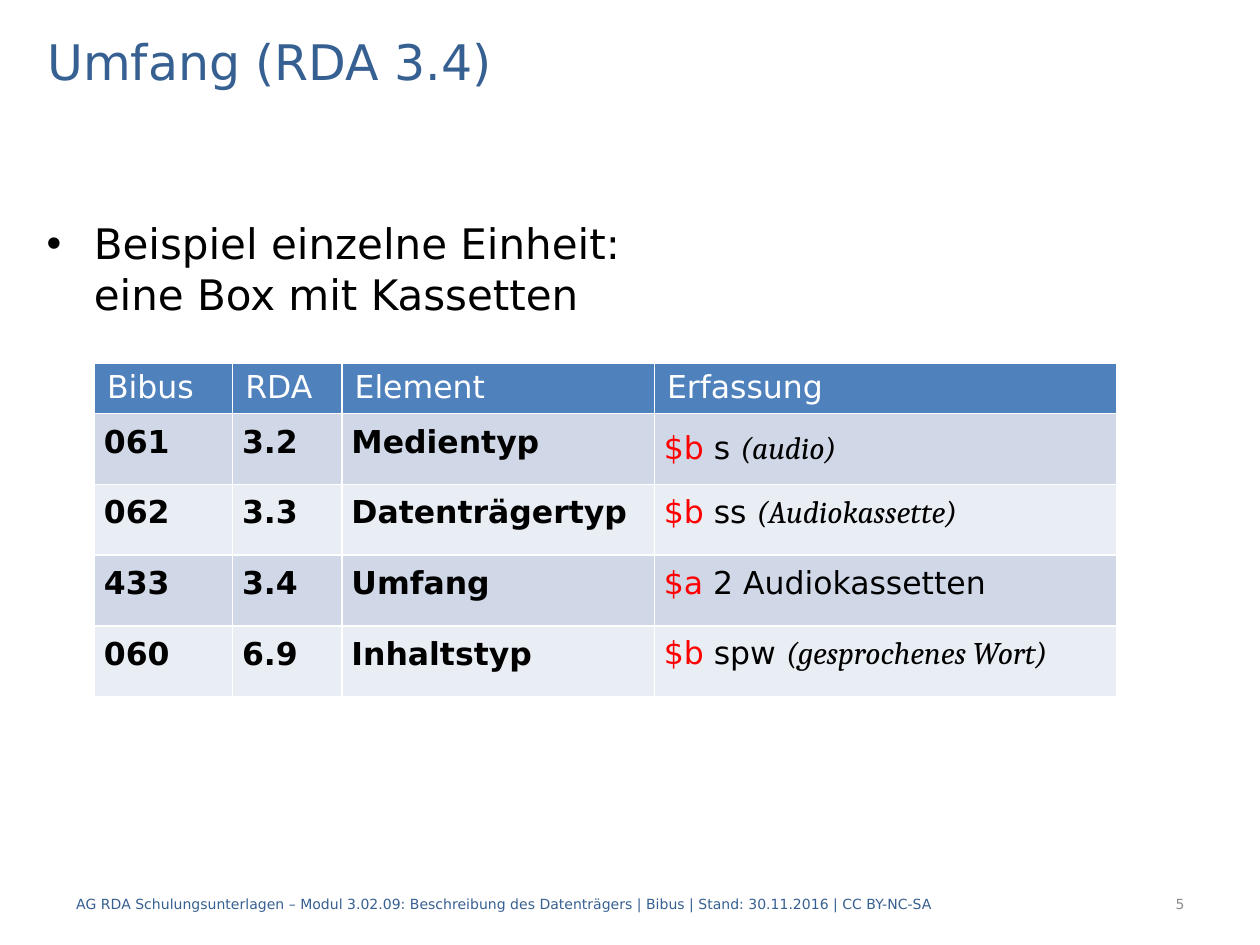
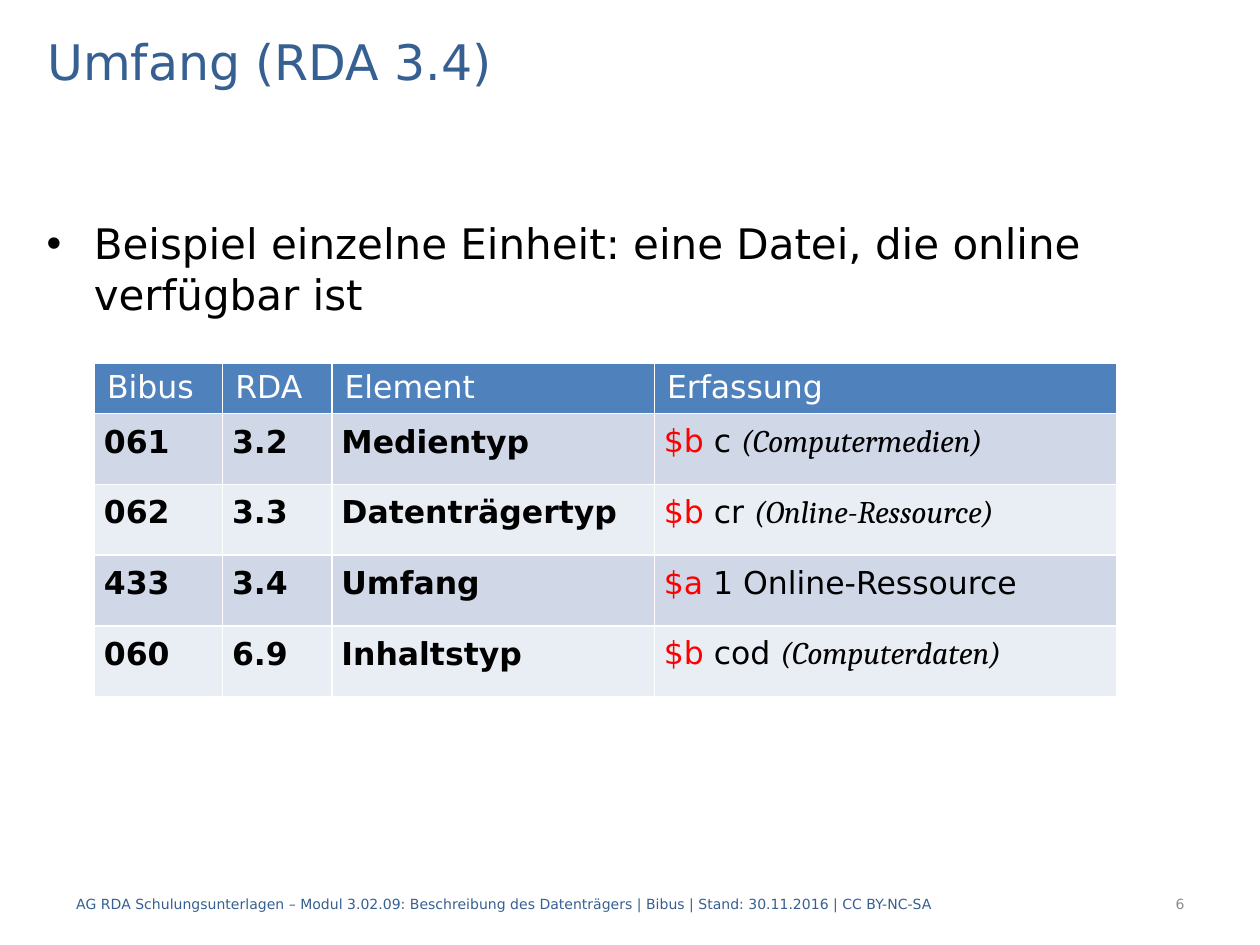
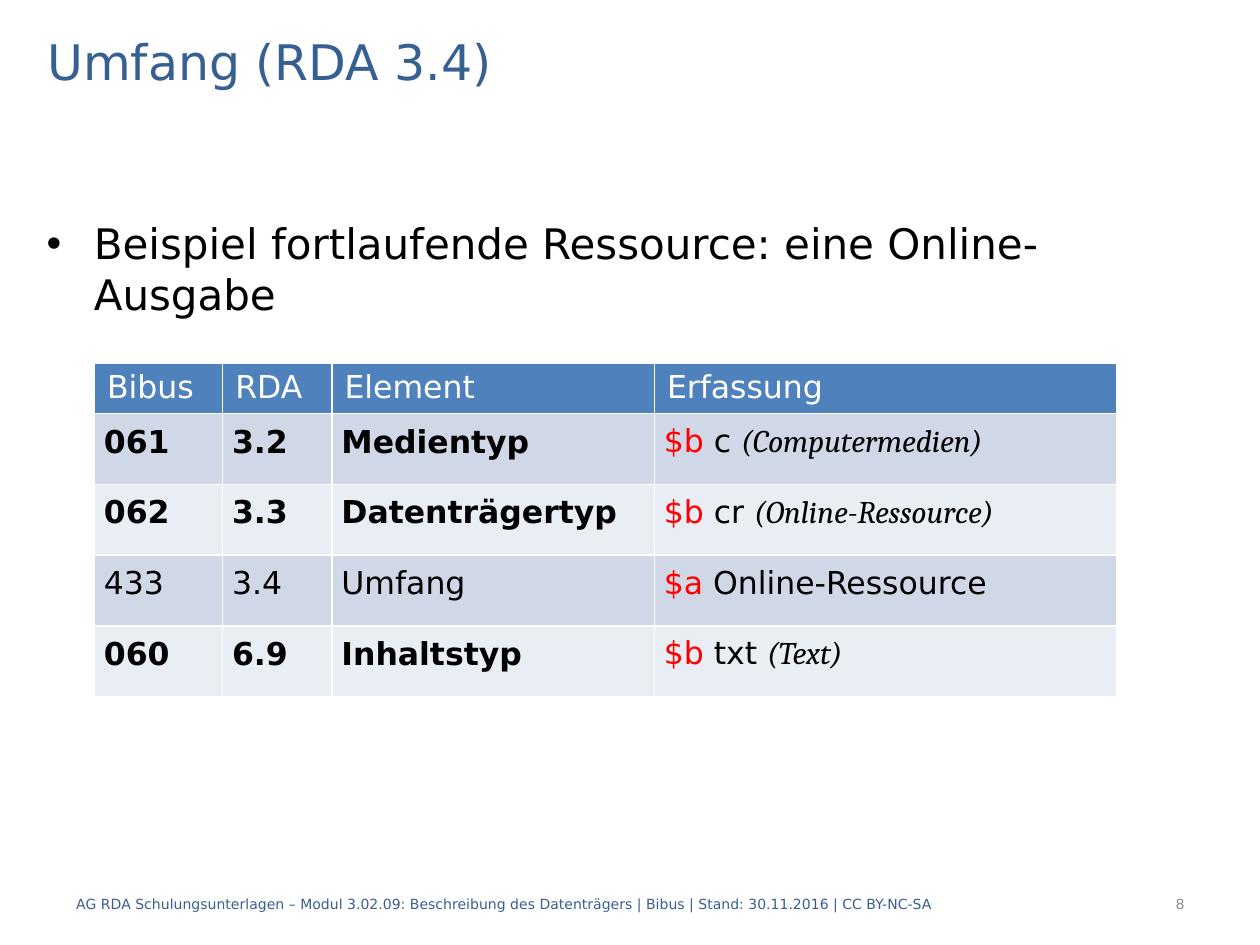
from lxml import etree
from pptx import Presentation
from pptx.dml.color import RGBColor
from pptx.enum.text import MSO_ANCHOR, PP_ALIGN
from pptx.oxml.ns import qn
from pptx.util import Pt

TOP, MIDDLE = MSO_ANCHOR.TOP, MSO_ANCHOR.MIDDLE
LEFT, RIGHT = PP_ALIGN.LEFT, PP_ALIGN.RIGHT

SANS, SERIF = "DejaVu Sans", "Cambria"
COLORS = {
    "title": "376092",
    "text": "000000",
    "code": "FF0000",
    "number": "8C8C8C",
    "header": "4F81BD",
    "odd": "D0D8E8",
    "even": "E9EDF4",
    "white": "FFFFFF",
}

TITLE_BOX = (20, 14.5, 680.5, 40.5)
BODY_BOX = (19.5, 66, 680.5, 430.5)
TABLE_BOX = (54, 207.5, 584, 190.2)
FOOTER_BOX = (36.5, 502, 647.5, 28.5)
HEADER_HEIGHT = 28.2
NUMBER_WIDTH = 114.5

TITLE = "Umfang (RDA 3.4)"
FOOTER = ("AG RDA Schulungsunterlagen – Modul 3.02.09: Beschreibung des "
          "Datenträgers | Bibus | Stand: 30.11.2016 | CC BY-NC-SA")
HEADINGS = ("Bibus", "RDA", "Element", "Erfassung")
FIELDS = (
    ("061", "3.2", "Medientyp"),
    ("062", "3.3", "Datenträgertyp"),
    ("433", "3.4", "Umfang"),
    ("060", "6.9", "Inhaltstyp"),
)
WIDE_FIRST = (79, 62.5, 178.5, 264)
NARROW_FIRST = (73.25, 62.5, 184.25, 264)

SLIDES = (
    {
        "number": "5",
        "example": "Beispiel einzelne Einheit: \neine Box mit Kassetten",
        "widths": WIDE_FIRST,
        "entries": (("$b", " s ", "(audio)"),
                    ("$b", " ss ", "(Audiokassette)"),
                    ("$a", " 2 Audiokassetten", ""),
                    ("$b", " spw ", "(gesprochenes Wort)")),
        "natural_spacing": ("061",),
    },
    {
        "number": "6",
        "example": "Beispiel einzelne Einheit: eine Datei, die online verfügbar ist",
        "widths": NARROW_FIRST,
        "entries": (("$b", " c ", "(Computermedien)"),
                    ("$b", " cr ", "(Online-Ressource)"),
                    ("$a", " 1 Online-Ressource", ""),
                    ("$b", " cod ", "(Computerdaten)")),
    },
    {
        "number": "8",
        "example": "Beispiel fortlaufende Ressource: eine Online-Ausgabe",
        "widths": NARROW_FIRST,
        "entries": (("$b", " c ", "(Computermedien)"),
                    ("$b", " cr ", "(Online-Ressource)"),
                    ("$a", " Online-Ressource", ""),
                    ("$b", " txt ", "(Text)")),
        "regular": ("433",),
    },
)


def add_text(p, text, size=18, color="text", font=SANS, bold=False, italic=False):
    """Append formatted text to a paragraph, breaking lines at newlines."""
    for i, line in enumerate(text.split("\n")):
        if i:
            p.add_line_break()
        r = p.add_run()
        r.text = line
        r.font.size = Pt(size)
        r.font.name = font
        r.font.bold = bold
        r.font.italic = italic
        r.font.color.rgb = RGBColor.from_string(COLORS[color])


def add_box(s, box, text, anchor=MIDDLE, align=LEFT, **fmt):
    """Add a wrapped text box and return its text frame."""
    tf = s.shapes.add_textbox(*map(Pt, box)).text_frame
    tf.word_wrap = True
    tf.vertical_anchor = anchor
    p = tf.paragraphs[0]
    p.alignment = align
    add_text(p, text, **fmt)
    return tf


def add_example(s, box, text):
    """Add the bulleted example line below the free top of the body box."""
    tf = add_box(s, box, text, anchor=TOP, size=24)
    tf.margin_top = Pt(58.5)
    pPr = tf.paragraphs[0]._p.get_or_add_pPr()
    pPr.set("marL", str(Pt(27)))
    pPr.set("indent", str(Pt(-27)))
    etree.SubElement(pPr, qn("a:buFont"), typeface="Arial")
    etree.SubElement(pPr, qn("a:buChar"), char="•")


def style_cell(cell, fill):
    """Give a cell white borders and a solid fill."""
    tcPr = cell._tc.get_or_add_tcPr()
    for side in ("lnL", "lnR", "lnT", "lnB"):
        ln = etree.SubElement(tcPr, qn(f"a:{side}"), w=str(Pt(1)))
        solid = etree.SubElement(ln, qn("a:solidFill"))
        etree.SubElement(solid, qn("a:srgbClr"), val=COLORS["white"])
    cell.fill.solid()
    cell.fill.fore_color.rgb = RGBColor.from_string(COLORS[fill])


def body_paragraph(cell, fill):
    """Style a body cell and return its paragraph."""
    style_cell(cell, fill)
    cell.vertical_anchor = MIDDLE
    cell.margin_left = cell.margin_right = Pt(5.4)
    cell.margin_top = cell.margin_bottom = 0
    p = cell.text_frame.paragraphs[0]
    p.line_spacing = Pt(13)
    p.space_after = Pt(6)
    return p


def add_record(s, box, widths, entries, regular=(), natural_spacing=()):
    """Add the table that shows how each field is recorded."""
    table = s.shapes.add_table(len(FIELDS) + 1, len(HEADINGS), *map(Pt, box)).table
    table.horz_banding = False
    for col, width in zip(table.columns, widths):
        col.width = Pt(width)
    for row in table.rows:
        row.height = Pt((box[3] - HEADER_HEIGHT) / len(FIELDS))
    table.rows[0].height = Pt(HEADER_HEIGHT)
    for j, heading in enumerate(HEADINGS):
        cell = table.cell(0, j)
        style_cell(cell, "header")
        add_text(cell.text_frame.paragraphs[0], heading, color="white")
    for i, (field, entry) in enumerate(zip(FIELDS, entries), 1):
        fill = "odd" if i % 2 else "even"
        for j, value in enumerate(field):
            p = body_paragraph(table.cell(i, j), fill)
            add_text(p, value, bold=field[0] not in regular)
        p = body_paragraph(table.cell(i, len(field)), fill)
        if field[0] in natural_spacing:
            p.line_spacing = None
        code, value, term = entry
        add_text(p, code, color="code")
        add_text(p, value)
        if term:
            add_text(p, term, font=SERIF, italic=True)


def add_footer(s, box, number):
    """Add the footer line and the slide number at its right end."""
    x, y, w, h = box
    add_box(s, (x, y, w - 24, h), FOOTER, size=8, color="title")
    add_box(s, (x + w - NUMBER_WIDTH, y, NUMBER_WIDTH, h), number,
            align=RIGHT, size=8, color="number")


def add_slide(prs, number, example, **record):
    """Add one example slide with title, bullet, table and footer."""
    s = prs.slides.add_slide(prs.slide_layouts[6])
    add_box(s, TITLE_BOX, TITLE, size=28, color="title")
    add_example(s, BODY_BOX, example)
    add_record(s, TABLE_BOX, **record)
    add_footer(s, FOOTER_BOX, number)


def main():
    """Build and save the presentation."""
    prs = Presentation()
    prs.slide_width, prs.slide_height = Pt(720), Pt(540)
    for content in SLIDES:
        add_slide(prs, **content)
    prs.save("out.pptx")


if __name__ == "__main__":
    main()
